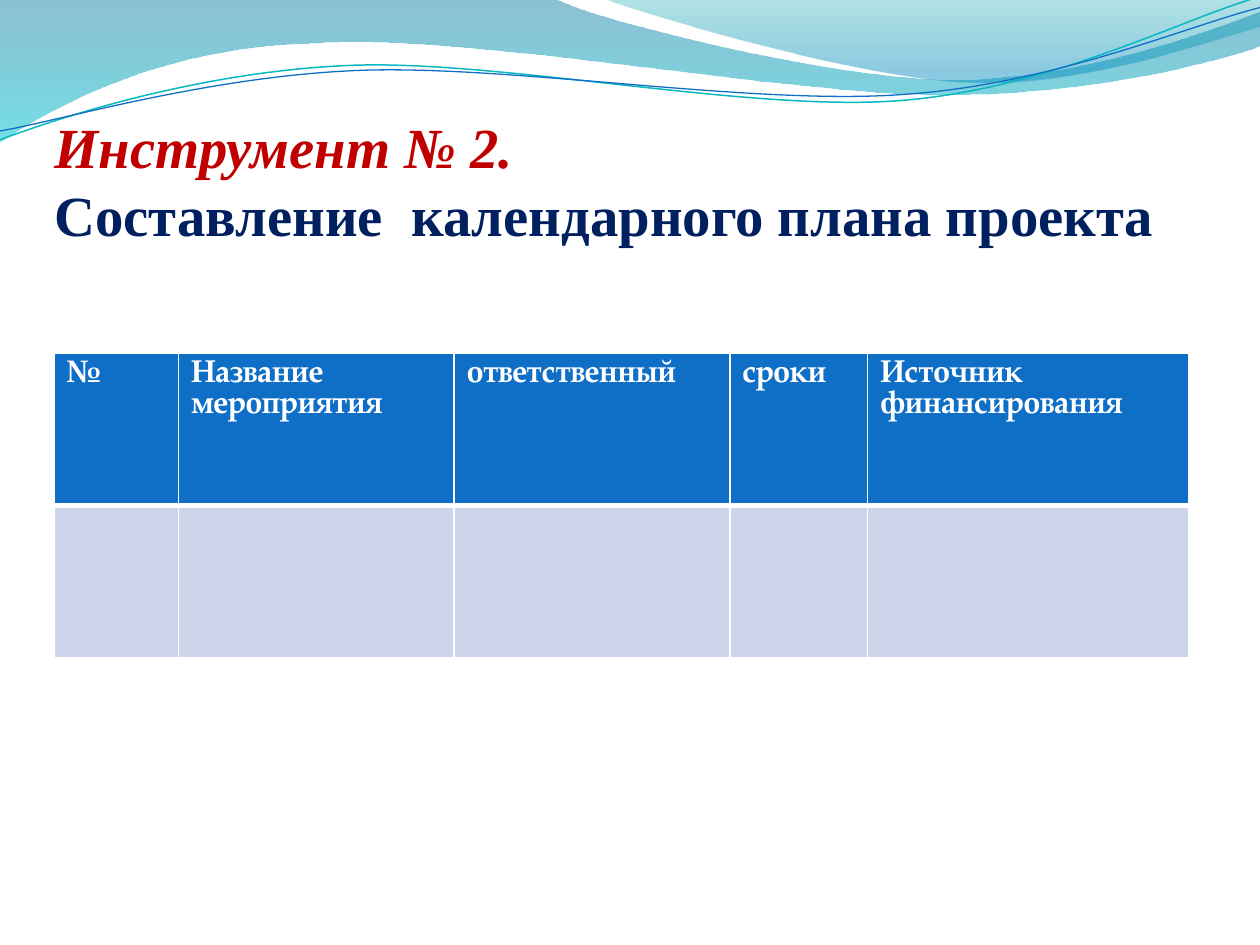
import pptx
import pptx.util
import pptx.dml.color
import pptx.enum.text
import pptx.oxml.ns
import lxml.etree

COLS, ROWS = 100, 75  # square grid cells, a tenth of an inch each
WHITE, BLUE, PALE = "FFFFFF", "0F6FC6", "CCD5EA"
RED, NAVY, TEAL = "C00000", "002060", "0AB8BF"


def rgb(value):
    return pptx.dml.color.RGBColor.from_string(value)


def sub(parent, tag, **attrs):
    return lxml.etree.SubElement(parent, pptx.oxml.ns.qn(tag), attrs)


class Deck:
    title_font = dict(name="Times New Roman", size=pptx.util.Pt(32.4), bold=True)
    table_font = dict(name="TeX Gyre Pagella", size=pptx.util.Pt(18), bold=True)

    def __init__(self):
        self.prs = pptx.Presentation()
        self.prs.slide_width = pptx.util.Inches(10)
        self.prs.slide_height = pptx.util.Inches(7.5)
        self.s = self.prs.slides.add_slide(self.prs.slide_layouts[5])
        self.layers = 0

    def x(self, cols):
        return round(self.prs.slide_width * cols / COLS)

    def y(self, rows):
        return round(self.prs.slide_height * rows / ROWS)

    def box(self, left, top, width, height):
        return self.x(left), self.y(top), self.x(width), self.y(height)

    def style(self, r, color, **values):
        for key, value in values.items():
            setattr(r.font, key, value)
        r.font.color.rgb = rgb(color)

    def freeform(self, start, parts, closed):
        """Outline of points (x, y) and cubic curves (three points in a row)."""
        builder = self.s.shapes.build_freeform(self.x(start[0]), self.y(start[1]))
        for part in parts:
            points = [(self.x(x), self.y(y)) for x, y in zip(part[::2], part[1::2])]
            builder.add_line_segments(points, close=False)
        if closed:
            builder.add_line_segments([], close=True)
        sp = builder.convert_to_shape()
        sp.shadow.inherit = False
        # Merge each three segments of a curve into one cubic segment
        segments = sp._element.spPr.iter(pptx.oxml.ns.qn("a:lnTo"))
        segments = iter(list(segments))
        for part in parts:
            group = [next(segments) for _ in part[::2]]
            if len(group) == 3:
                curve = lxml.etree.Element(pptx.oxml.ns.qn("a:cubicBezTo"))
                group[0].addprevious(curve)
                for segment in group:
                    curve.append(segment[0])
                    segment.getparent().remove(segment)
        return sp

    def to_master(self, sp):
        """Move a shape behind the placeholders of the slide master."""
        tree = self.prs.slide_master.shapes._spTree
        tree.insert(2 + self.layers, sp._element)
        self.layers += 1

    def wave(self, start, parts, *stops):
        sp = self.freeform(start, parts, True)
        sp.line.fill.background()
        sp.fill.gradient()
        sp.fill.gradient_angle = 270
        for stop, (position, color, opacity) in zip(sp.fill.gradient_stops, stops):
            stop.position = position
            stop.color.rgb = rgb(color)
        clrs = sp._element.spPr.iter(pptx.oxml.ns.qn("a:srgbClr"))
        for clr, (_, _, opacity) in zip(clrs, stops):
            sub(clr, "a:alpha", val=str(opacity * 1000))
        self.to_master(sp)

    def strand(self, start, parts, color, width):
        sp = self.freeform(start, parts, False)
        sp.fill.background()
        sp.line.color.rgb = rgb(color)
        sp.line.width = pptx.util.Pt(width)
        self.to_master(sp)

    def title(self, place, lines):
        sp = self.s.shapes.title
        sp.left, sp.top, sp.width, sp.height = self.box(*place)
        tf = sp.text_frame
        frame = dict(word_wrap=True, margin_left=0, margin_right=0,
                     margin_top=self.y(0.5), margin_bottom=self.y(7.53),
                     auto_size=pptx.enum.text.MSO_AUTO_SIZE.NONE,
                     vertical_anchor=pptx.enum.text.MSO_ANCHOR.BOTTOM)
        for key, value in frame.items():
            setattr(tf, key, value)
        p = tf.paragraphs[0]
        p.alignment = pptx.enum.text.PP_ALIGN.LEFT
        p.line_spacing = pptx.util.Pt(38.9)
        for i, (text, color, italic) in enumerate(lines):
            if i:
                p.add_line_break()
            r = p.add_run()
            r.text = text
            self.style(r, color, italic=italic, **self.title_font)

    def borders(self, cell, **widths):
        tcPr = cell._tc.get_or_add_tcPr()
        for side in "LRTB":
            width = pptx.util.Pt(widths.get(side, 1))
            ln = sub(tcPr, f"a:ln{side}", w=str(width))
            sub(sub(ln, "a:solidFill"), "a:srgbClr", val=WHITE)

    def table(self, place, widths, heads):
        table = self.s.shapes.add_table(2, len(heads), *self.box(*place)).table
        for col, width in zip(table.columns, widths):
            col.width = self.x(width)
        for i, head in enumerate(heads):
            top, bottom = table.cell(0, i), table.cell(1, i)
            self.borders(top, B=3)
            self.borders(bottom, T=3)
            for cell, color in ((top, BLUE), (bottom, PALE)):
                cell.fill.solid()
                cell.fill.fore_color.rgb = rgb(color)
            r = top.text_frame.paragraphs[0].add_run()
            r.text = head
            self.style(r, WHITE, **self.table_font)


def main():
    deck = Deck()

    # Waves along the top edge
    deck.wave((0, 0), [(44, -0.1),
                       (47.6, 1.7, 66.4, 6.3, 75.8, 6.3),
                       (85.3, 6.3, 95.8, 2.6, 100, 0.9),
                       (100.1, 3.6),
                       (98.3, 4.4, 87, 7.6, 74.6, 7.5),
                       (62.2, 7.5, 38.2, 2.8, 25.7, 3.4),
                       (12.9, 3.6, 4.6, 8.3, -0.1, 11.3),
                       (0, 0)],
              (0, "0074A1", 45), (1, "00C6CF", 55))
    deck.wave((47.9, -0.1), [(50.9, 1.1, 68.2, 6.2, 76.9, 6.5),
                             (85.6, 6.9, 96.1, 3.2, 100, 2.1),
                             (100, 0),
                             (47.9, -0.1)],
              (0, "00A1A9", 30), (0.8, "008BBF", 45))

    # Thin strands
    deck.strand((0, 11.1), [(4.8, 9.3, 15.8, 5.7, 27.7, 5.2),
                            (39.5, 4.7, 59.3, 8.9, 71.3, 8),
                            (83.3, 7.1, 93.8, 1.5, 99.8, -0.2)], TEAL, 0.85)
    deck.strand((0, 10.4), [(4.7, 9.6, 16.4, 6.1, 28.3, 5.6),
                            (40.3, 5.1, 59.7, 8.4, 71.7, 7.5),
                            (83.6, 6.7, 94.1, 2.1, 100, 0.6)], BLUE, 0.75)

    # Title
    deck.title((4.33, 14.7, 90, 12.5),
               [("Инструмент № 2.", RED, True),
                ("Составление  календарного плана проекта", NAVY, False)])

    # Plan table
    deck.table((4.33, 28.05, 90, 24.15), (9.84, 21.88, 21.88, 10.94, 25.46),
               ("№", "Название мероприятия", "ответственный", "сроки",
                "Источник финансирования"))

    deck.prs.save("out.pptx")


if __name__ == "__main__":
    main()
